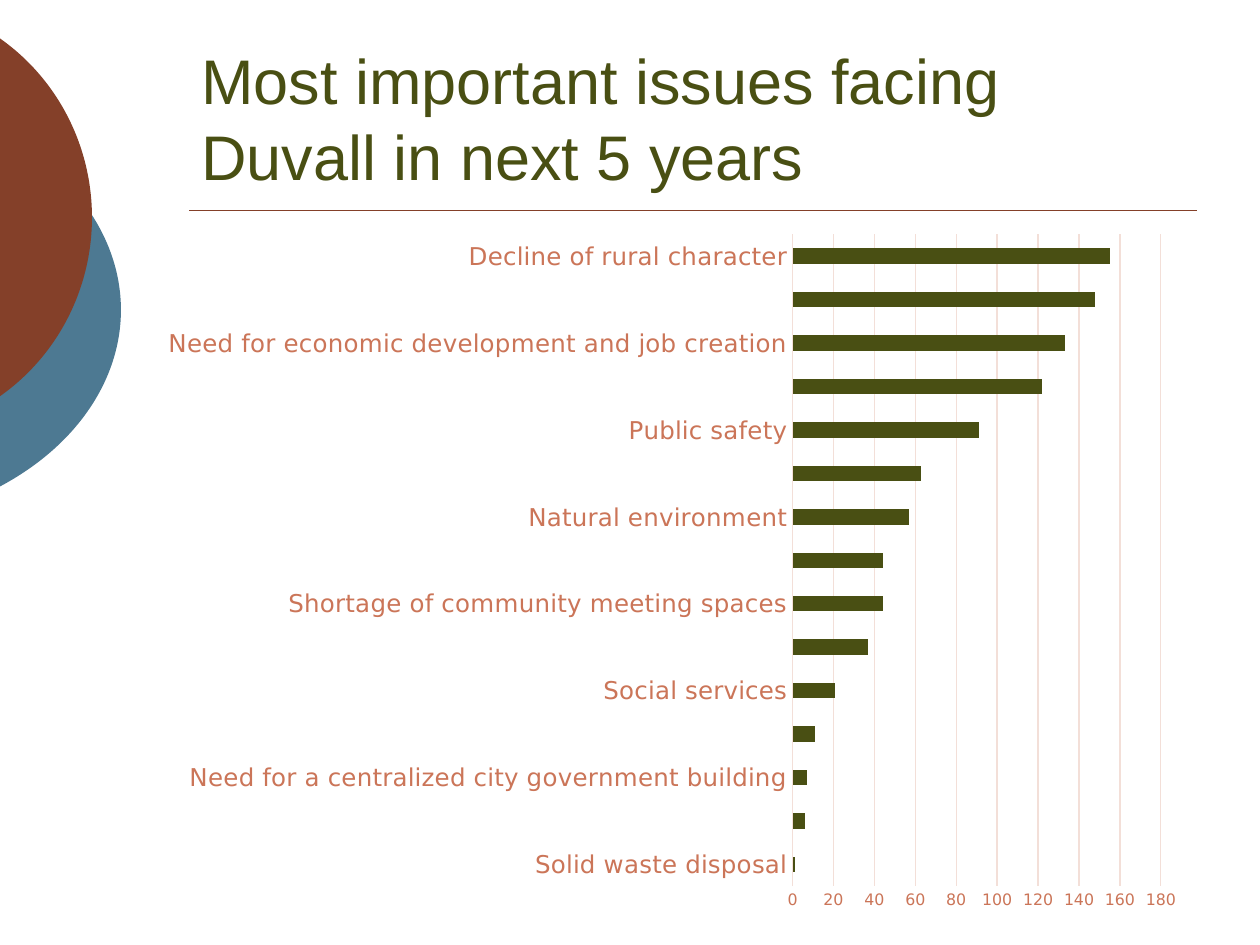
from typing import NamedTuple

from lxml.etree import SubElement
from pptx import Presentation
from pptx.chart.data import CategoryChartData
from pptx.dml.color import RGBColor
from pptx.enum.chart import XL_CHART_TYPE, XL_TICK_MARK
from pptx.enum.shapes import MSO_CONNECTOR, MSO_SHAPE
from pptx.enum.text import MSO_ANCHOR
from pptx.oxml.ns import qn
from pptx.util import Inches, Pt

HUES = {
    "olive": "494F13",
    "rust": "844029",
    "blue": "4D7992",
    "coral": "CB7558",
    "pale": "F3DFD8",
}


class Disc(NamedTuple):
    left: float
    top: float
    width: float
    height: float
    hue: str


class Issue(NamedTuple):
    name: str
    votes: int


DISCS = [
    Disc(-3.54, 0.75, 4.5, 3.42, "blue"),
    Disc(-2.65, 0, 3.38, 3.45, "rust"),
]

ISSUES = [
    Issue("Solid waste disposal", 1),
    Issue("Stormwater (detention ponds and vaults)", 6),
    Issue("Need for a centralized city government building", 7),
    Issue("Wastewater (sewer) treatment", 11),
    Issue("Social services", 21),
    Issue("Flooding", 37),
    Issue("Shortage of community meeting spaces", 44),
    Issue("Park facilities", 44),
    Issue("Natural environment", 57),
    Issue("Non-motorized transportation facilities (sidewalks, bicycle lanes)", 63),
    Issue("Public safety", 91),
    Issue("Roads (maintenance and construction)", 122),
    Issue("Need for economic development and job creation", 133),
    Issue("Residential development", 148),
    Issue("Decline of rural character", 155),
]


def shade(name: str) -> RGBColor:
    return RGBColor.from_string(HUES[name])


def style(font, face: str, size: float, hue: str) -> None:
    font.name = face
    font.size = Pt(size)
    font.color.rgb = shade(hue)


def stroke(line, hue: str, width: float) -> None:
    line.color.rgb = shade(hue)
    line.width = Pt(width)


def draw_disc(slide, disc: Disc) -> None:
    oval = slide.shapes.add_shape(MSO_SHAPE.OVAL, *map(Inches, disc[:4]))
    oval.shadow.inherit = False
    oval.fill.solid()
    oval.fill.fore_color.rgb = shade(disc.hue)
    oval.line.fill.background()


def draw_rule(slide) -> None:
    rule = slide.shapes.add_connector(
        MSO_CONNECTOR.STRAIGHT, Inches(1.5), Inches(1.67), Inches(9.5), Inches(1.67)
    )
    stroke(rule.line, "rust", 1)
    SubElement(rule._element.spPr, qn("a:effectLst"))


def draw_title(slide) -> None:
    box = slide.shapes.add_textbox(Inches(1.5), Inches(0.33), Inches(8), Inches(1.25))
    frame = box.text_frame
    frame.word_wrap = True
    frame.vertical_anchor = MSO_ANCHOR.BOTTOM
    para = frame.paragraphs[0]
    para.text = "Most important issues facing Duvall in next 5 years"
    style(para.font, "Arial", 36, "olive")


def style_axis(axis, size: float) -> None:
    axis.major_tick_mark = XL_TICK_MARK.NONE
    axis.minor_tick_mark = XL_TICK_MARK.NONE
    style(axis.tick_labels.font, "DejaVu Sans", size, "coral")


def draw_chart(slide) -> None:
    data = CategoryChartData()
    data.categories = [issue.name for issue in ISSUES]
    data.add_series("Series 1", [issue.votes for issue in ISSUES])
    chart = slide.shapes.add_chart(
        XL_CHART_TYPE.BAR_CLUSTERED,
        Inches(1.17), Inches(1.75), Inches(8.33), Inches(5.58), data,
    ).chart
    chart.has_legend = False
    chart.has_title = False
    style(chart.font, "DejaVu Sans", 10, "rust")

    plot = chart.plots[0]
    plot.gap_width = 182
    plot.vary_by_categories = False
    fill = plot.series[0].format.fill
    fill.solid()
    fill.fore_color.rgb = shade("olive")

    names = chart.category_axis
    style_axis(names, 14)
    names.has_major_gridlines = False
    stroke(names.format.line, "pale", 0.75)

    scale = chart.value_axis
    style_axis(scale, 9)
    scale.minimum_scale = 0
    scale.maximum_scale = 180
    scale.major_unit = 20
    scale.format.line.fill.background()
    scale.has_major_gridlines = True
    stroke(scale.major_gridlines.format.line, "pale", 0.75)


def main() -> None:
    deck = Presentation()
    deck.slide_width = Inches(10)
    deck.slide_height = Inches(7.5)
    slide = deck.slides.add_slide(deck.slide_layouts[6])
    for disc in DISCS:
        draw_disc(slide, disc)
    draw_rule(slide)
    draw_title(slide)
    draw_chart(slide)
    deck.save("out.pptx")


if __name__ == "__main__":
    main()
